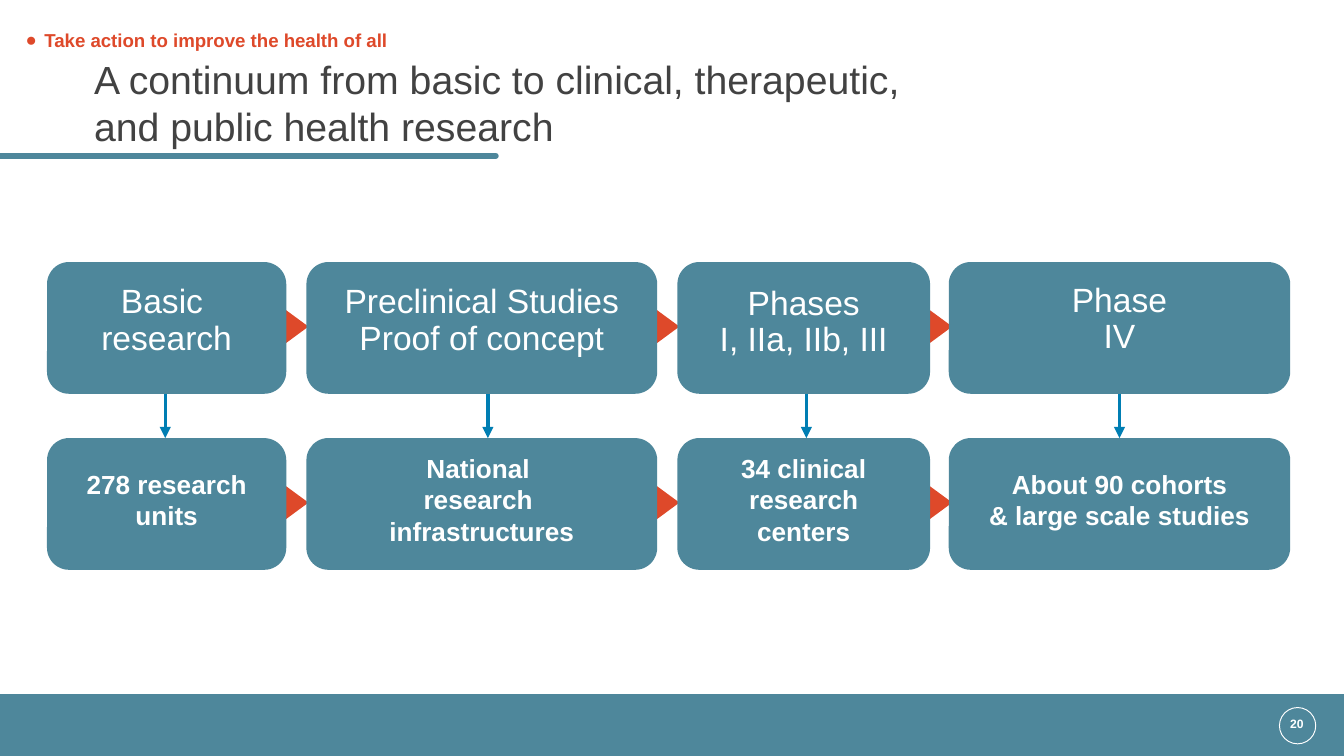
from lxml import etree
from pptx import Presentation
from pptx.dml.color import RGBColor
from pptx.enum import shapes, text
from pptx.oxml.ns import qn
from pptx.util import Inches, Pt

TEAL = RGBColor(0x4E, 0x87, 0x9B)
ORANGE = RGBColor(0xDE, 0x49, 0x2A)
BLUE = RGBColor(0x00, 0x7E, 0xB3)
GREY = RGBColor(0x42, 0x42, 0x42)
WHITE = RGBColor(0xFF, 0xFF, 0xFF)
SLIDE_WIDTH = 10
SLIDE_HEIGHT = SLIDE_WIDTH * 9 / 16

# left, width, arrow x, stage label top and lines, resource lines and drawn line count
STAGES = [
    (0.35, 1.78, 1.23, 2.12, ["Basic ", "research"],
     ["278 research", "units"], 2),
    (2.28, 2.61, 3.63, 2.12, ["Preclinical Studies", "Proof of concept"],
     ["National ", "research ", "infrastructures"], 3),
    (5.04, 1.88, 6.00, 2.13, ["Phases", "I, IIa, IIb, III"],
     ["34 clinical research", "centers"], 3),
    (7.06, 2.54, 8.33, 2.11, ["Phase", "IV"],
     ["About 90 cohorts", "& large scale studies"], 2),
]
BOX_HEIGHT = 0.98
STAGE_TOP, RESOURCE_TOP = 1.95, 3.26


def add_box(slide, kind, box, fill=None, line=None):
    shape = slide.shapes.add_shape(kind, *map(Inches, box))
    shape.shadow.inherit = False
    if fill is None:
        shape.fill.background()
    else:
        shape.fill.solid()
        shape.fill.fore_color.rgb = fill
    if line is None:
        shape.line.fill.background()
    else:
        shape.line.color.rgb = line
        shape.line.width = Pt(0.5)
    return shape


def add_line(slide, start, end, color, width):
    connector = slide.shapes.add_connector(
        shapes.MSO_CONNECTOR.STRAIGHT, *map(Inches, start + end))
    connector.line.color.rgb = color
    connector.line.width = Pt(width)
    properties = connector._element.spPr
    etree.SubElement(properties, qn("a:effectLst"))
    return properties.find(qn("a:ln"))


def add_text(slide, box, lines, size, color, bold=False, centered=True,
             spacing=None, insets=(0, 0, 0, 0)):
    """Add one paragraph whose lines are separated by line breaks."""
    frame = slide.shapes.add_textbox(*map(Inches, box)).text_frame
    frame.word_wrap = True
    (frame.margin_left, frame.margin_top,
     frame.margin_right, frame.margin_bottom) = map(Inches, insets)
    paragraph = frame.paragraphs[0]
    paragraph.alignment = text.PP_ALIGN.CENTER if centered else text.PP_ALIGN.LEFT
    if spacing:
        paragraph.line_spacing = spacing
    for index, line in enumerate(lines):
        if index:
            paragraph.add_line_break()
        run = paragraph.add_run()
        run.text = line
        run.font.name = "Arial"
        run.font.size = Pt(size)
        run.font.bold = bold
        run.font.color.rgb = color
    return paragraph


def add_bullet(paragraph, color, indent):
    properties = paragraph._p.get_or_add_pPr()
    properties.set("marL", str(Inches(indent)))
    properties.set("indent", str(-Inches(indent)))
    bullet_color = etree.SubElement(properties, qn("a:buClr"))
    etree.SubElement(bullet_color, qn("a:srgbClr"), val=str(color))
    etree.SubElement(properties, qn("a:buFont"), typeface="Arial")
    etree.SubElement(properties, qn("a:buChar"), char="●")


def add_header(slide, left, top):
    # Section name, slide heading and rule
    section = add_text(slide, (left + 0.19, top + 0.23, 6.2, 0.31),
                       ["Take action to improve the health of all"],
                       10, ORANGE, bold=True, centered=False, spacing=0.9)
    add_bullet(section, ORANGE, 0.14)
    add_text(slide, (left + 0.7, top + 0.41, 7.34, 0.71),
             ["A continuum from basic to clinical, therapeutic, ",
              "and public health research"], 21, GREY, centered=False)
    rule = add_line(slide, (left, top + 1.16), (left + 3.69, top + 1.16), TEAL, 3)
    rule.set("cap", "rnd")


def add_footer(slide, left, top, width, height):
    # Band with the slide number in a ring
    add_box(slide, shapes.MSO_SHAPE.RECTANGLE, (left, top, width, height), TEAL)
    add_box(slide, shapes.MSO_SHAPE.OVAL,
            (left + 9.52, top + 0.1, 0.27, 0.27), line=WHITE)
    add_text(slide, (left + 9.32, top + 0.12, 0.68, 0.24), ["20"], 6.5, WHITE,
             bold=True, insets=(0.1, 0.05, 0.12, 0.05))


def add_row(slide, top):
    # Triangles go first, so that the boxes lie over their edges
    for left, width, *_ in STAGES[:-1]:
        center_x, center_y = left + width + 0.08, top + 0.48
        triangle = add_box(slide, shapes.MSO_SHAPE.ISOSCELES_TRIANGLE,
                           (center_x - 0.125, center_y - 0.085, 0.25, 0.17), ORANGE)
        triangle.rotation = 90
    for left, width, *_ in STAGES:
        add_box(slide, shapes.MSO_SHAPE.ROUNDED_RECTANGLE,
                (left, top, width, BOX_HEIGHT), TEAL)


def add_continuum(slide):
    add_row(slide, STAGE_TOP)
    add_row(slide, RESOURCE_TOP)
    for left, width, arrow_x, label_top, stage, resource, line_count in STAGES:
        # Stage label above, resource label centred below
        add_text(slide, (left, label_top, width, 0.63), stage, 18, WHITE, spacing=0.9)
        height = 0.1 + 0.235 * line_count
        add_text(slide, (left, RESOURCE_TOP + 0.46 - height / 2, width, height),
                 resource, 14, WHITE, bold=True, insets=(0.1, 0.05, 0.1, 0.05))
        # Arrow from stage to resource
        arrow = add_line(slide, (arrow_x, STAGE_TOP + BOX_HEIGHT),
                         (arrow_x, RESOURCE_TOP), BLUE, 1.75)
        etree.SubElement(arrow, qn("a:tailEnd"), type="triangle")


def main():
    presentation = Presentation()
    presentation.slide_width = Inches(SLIDE_WIDTH)
    presentation.slide_height = Inches(SLIDE_HEIGHT)
    slide = presentation.slides.add_slide(presentation.slide_layouts[6])
    add_header(slide, 0, 0)
    add_footer(slide, 0, SLIDE_HEIGHT - 0.46, SLIDE_WIDTH, 0.46)
    add_continuum(slide)
    presentation.save("out.pptx")


if __name__ == "__main__":
    main()
